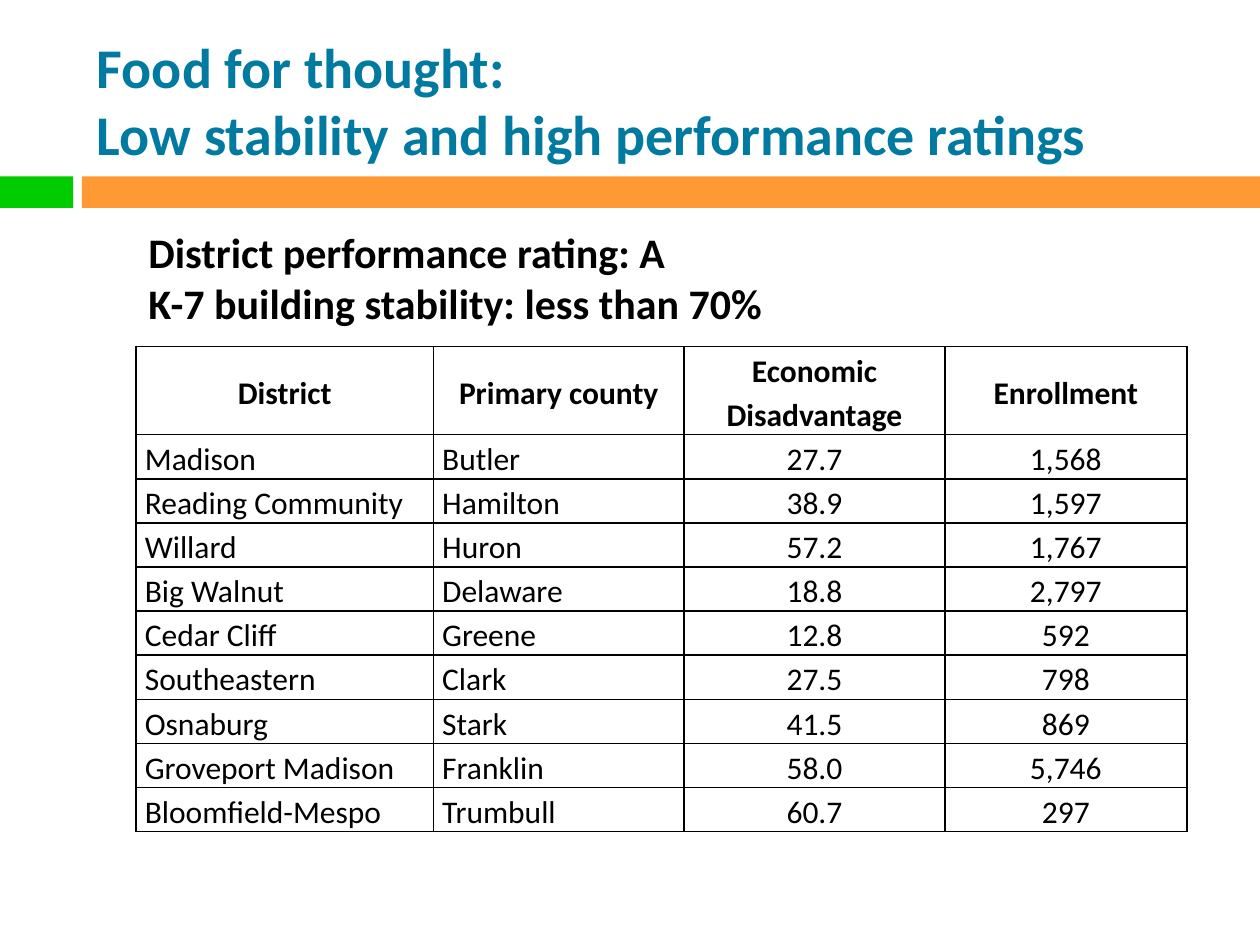
from dataclasses import dataclass

from lxml.etree import SubElement as Sub
from pptx import Presentation
from pptx.dml.color import RGBColor as RGB
from pptx.enum.shapes import MSO_SHAPE as Shape
from pptx.enum.text import MSO_ANCHOR as Anchor, PP_ALIGN as Align
from pptx.oxml.ns import qn
from pptx.util import Inches, Pt


@dataclass(frozen=True)
class Theme:
    font: str = "Calibri"
    title: str = "007AA0"
    ink: str = "000000"
    green: str = "00CC00"
    orange: str = "FF9933"
    big: int = 32
    mid: int = 24
    small: int = 18
    rule: int = 1


class Page:
    def __init__(self, slide, theme):
        self.slide = slide
        self.theme = theme

    def style(self, para, size, color, bold):
        for run in para.runs:
            font = run.font
            font.name = self.theme.font
            font.size = Pt(size)
            font.bold = bold
            font.color.rgb = RGB.from_string(color)

    def bar(self, box, color):
        bar = self.slide.shapes.add_shape(Shape.RECTANGLE, *map(Inches, box))
        bar.shadow.inherit = False
        bar.fill.solid()
        bar.fill.fore_color.rgb = RGB.from_string(color)
        bar.line.fill.background()

    def text(self, box, words, size, color, anchor=Anchor.TOP):
        frame = self.slide.shapes.add_textbox(*map(Inches, box)).text_frame
        frame.word_wrap = True
        frame.vertical_anchor = anchor
        para = frame.paragraphs[0]
        para.text = words
        self.style(para, size, color, True)

    def border(self, cell):
        props = cell._tc.get_or_add_tcPr()
        for side in ("a:lnL", "a:lnR", "a:lnT", "a:lnB"):
            line = Sub(props, qn(side), w=str(Pt(self.theme.rule)))
            fill = Sub(line, qn("a:solidFill"))
            Sub(fill, qn("a:srgbClr"), val=self.theme.ink)

    def cell(self, cell, words, bold, align):
        self.border(cell)
        cell.fill.background()
        cell.vertical_anchor = Anchor.MIDDLE
        cell.margin_left = cell.margin_right = Inches(0.07)
        cell.margin_top = cell.margin_bottom = 0
        para = cell.text_frame.paragraphs[0]
        para.text = words
        para.alignment = align
        para.line_spacing = 1.15
        self.style(para, self.theme.small, self.theme.ink, bold)

    def table(self, box, rows, widths, head, body):
        frame = self.slide.shapes.add_table(
            len(rows), len(widths), *map(Inches, box))
        table = frame.table
        table.first_row = table.horz_banding = False
        for col, width in zip(table.columns, widths):
            col.width = Inches(width)
        for i, row in enumerate(rows):
            table.rows[i].height = Inches(body if i else head)
            for j, words in enumerate(row):
                align = Align.LEFT if i and j < 2 else Align.CENTER
                self.cell(table.cell(i, j), words, i == 0, align)


ROWS = [
    ("District", "Primary county", "Economic Disadvantage", "Enrollment"),
    ("Madison", "Butler", "27.7", "1,568"),
    ("Reading Community", "Hamilton", "38.9", "1,597"),
    ("Willard", "Huron", "57.2", "1,767"),
    ("Big Walnut", "Delaware", "18.8", "2,797"),
    ("Cedar Cliff", "Greene", "12.8", "592"),
    ("Southeastern", "Clark", "27.5", "798"),
    ("Osnaburg", "Stark", "41.5", "869"),
    ("Groveport Madison", "Franklin", "58.0", "5,746"),
    ("Bloomfield-Mespo", "Trumbull", "60.7", "297"),
]


def main():
    deck = Presentation()
    deck.slide_width, deck.slide_height = Inches(10), Inches(7.5)
    theme = Theme()
    page = Page(deck.slides.add_slide(deck.slide_layouts[6]), theme)

    # Divider bars
    page.bar((0, 1.4, 0.58, 0.25), theme.green)
    page.bar((0.65, 1.4, 9.35, 0.25), theme.orange)

    # Title
    page.text((0.67, 0.25, 8.92, 1.08),
              "Food for thought:\vLow stability and high performance ratings",
              theme.big, theme.title, Anchor.MIDDLE)

    # District table
    page.table((1.08, 2.75, 8.34, 3.84), ROWS,
               (2.36, 1.99, 2.07, 1.92), head=0.7, body=0.35)

    # Criteria above the table
    page.text((1.08, 1.75, 6, 0.91),
              "District performance rating: A\v"
              "K-7 building stability: less than 70%",
              theme.mid, theme.ink)

    deck.save("out.pptx")


if __name__ == "__main__":
    main()
